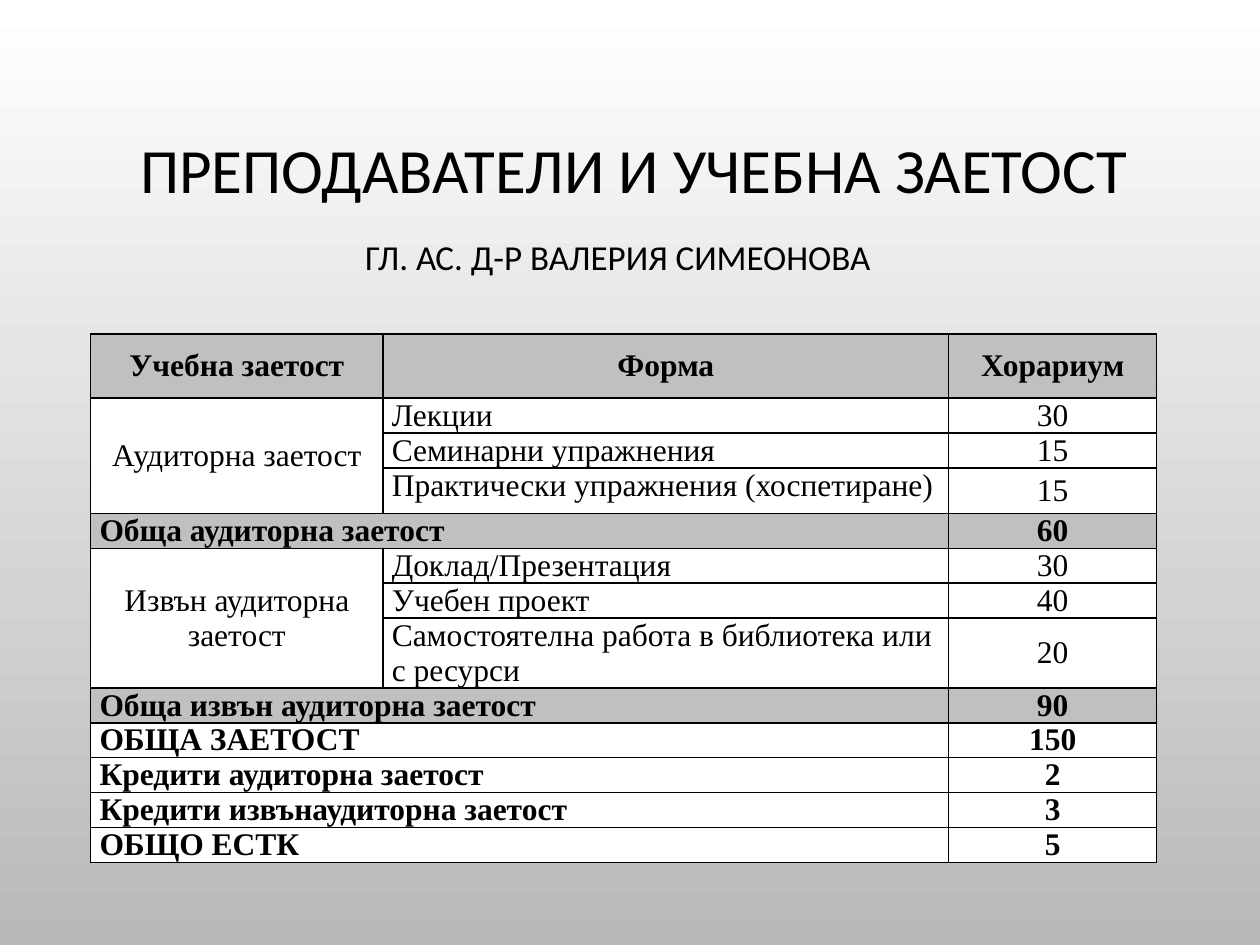
from lxml import etree
from pptx import Presentation
from pptx.dml.color import RGBColor
from pptx.enum.text import MSO_ANCHOR as Anchor, MSO_AUTO_SIZE as AutoSize, PP_ALIGN as Align
from pptx.oxml.ns import qn
from pptx.util import Inches, Pt

BLACK = RGBColor(0x00, 0x00, 0x00)
WHITE = RGBColor(0xFF, 0xFF, 0xFF)
SILVER = RGBColor(0xC0, 0xC0, 0xC0)
BACKDROP_END = RGBColor(0xB9, 0xB9, 0xB9)


def fill_heading(holder, text, size, line_spacing, left, top, width, height):
    holder.left, holder.top = Inches(left), Inches(top)
    holder.width, holder.height = Inches(width), Inches(height)
    frame = holder.text_frame
    frame.text = text
    frame.word_wrap = True
    frame.auto_size = AutoSize.NONE
    paragraph = frame.paragraphs[0]
    paragraph.alignment = Align.CENTER
    paragraph.line_spacing = line_spacing
    paragraph.space_before = Pt(0)
    font = paragraph.runs[0].font
    font.name, font.size, font.color.rgb = "Calibri", Pt(size), BLACK
    return paragraph


def add_borders(cell):
    properties = cell._tc.get_or_add_tcPr()
    for side in ("a:lnL", "a:lnR", "a:lnT", "a:lnB"):
        line = etree.SubElement(properties, qn(side), w=str(Pt(1)))
        solid = etree.SubElement(line, qn("a:solidFill"))
        etree.SubElement(solid, qn("a:srgbClr"), val=str(BLACK))


prs = Presentation()
prs.slide_width, prs.slide_height = Inches(10), Inches(7.5)
slide = prs.slides.add_slide(prs.slide_layouts[1])

# Background fading from top to bottom
backdrop = slide.background.fill
backdrop.gradient()
backdrop.gradient_angle = 270
for stop, color in zip(backdrop.gradient_stops, (WHITE, BACKDROP_END)):
    stop.color.rgb = color

# Title and lecturer
title, lecturer = slide.placeholders
fill_heading(title, "ПРЕПОДАВАТЕЛИ И УЧЕБНА ЗАЕТОСТ", 36, 0.9, 0.71, 0.75, 8.64, 1.24)
title.text_frame.vertical_anchor = Anchor.MIDDLE
lecturer_line = fill_heading(lecturer, "ГЛ. АС. Д-Р ВАЛЕРИЯ СИМЕОНОВА", 20, 1.2, 0.66, 1.75, 8.49, 0.63)
lecturer.text_frame.vertical_anchor = Anchor.TOP
indents = lecturer_line._p.get_or_add_pPr()
indents.set("marL", "0")
indents.set("indent", "0")
etree.SubElement(indents, qn("a:buNone"))

# Workload: activity, form, hours
workload = [
    ("Учебна заетост", "Форма", "Хорариум"),
    ("Аудиторна заетост", "Лекции", "30"),
    ("", "Семинарни упражнения", "15"),
    ("", "Практически упражнения (хоспетиране)", "15"),
    ("Обща аудиторна заетост", "", "60"),
    ("Извън аудиторна заетост", "Доклад/Презентация", "30"),
    ("", "Учебен проект", "40"),
    ("", "Самостоятелна работа в библиотека или с ресурси", "20"),
    ("Обща извън аудиторна заетост", "", "90"),
    ("ОБЩА ЗАЕТОСТ", "", "150"),
    ("Кредити аудиторна заетост", "", "2"),
    ("Кредити извънаудиторна заетост", "", "3"),
    ("ОБЩО ЕСТК", "", "5"),
]
column_widths = (2.32, 4.49, 1.65)
tall_rows = {0: 0.51, 3: 0.36, 7: 0.51}
shaded_rows = (0, 4, 8)
middle_hours = (3, 5, 6, 7)

table = slide.shapes.add_table(
    len(workload), 3, Inches(0.72), Inches(2.65), Inches(8.46), Inches(4)
).table
for column, width in zip(table.columns, column_widths):
    column.width = Inches(width)

for r, entries in enumerate(workload):
    table.rows[r].height = Inches(tall_rows.get(r, 0.25))
    is_total = not entries[1]
    for c, entry in enumerate(entries):
        cell = table.cell(r, c)
        cell.margin_left = cell.margin_right = Inches(0.07)
        cell.margin_top = cell.margin_bottom = 0
        add_borders(cell)
        cell.fill.solid()
        cell.fill.fore_color.rgb = SILVER if r in shaded_rows else WHITE

        is_group = c == 0 and not is_total
        centered = r == 0 or c == 2 or is_group
        middle = r == 0 or is_group or (c == 2 and r in middle_hours)
        cell.vertical_anchor = Anchor.MIDDLE if middle else Anchor.TOP
        cell.text_frame.text = entry
        paragraph = cell.text_frame.paragraphs[0]
        paragraph.alignment = Align.CENTER if centered else Align.LEFT
        font = paragraph.font
        if paragraph.runs:
            font = paragraph.runs[0].font
        font.name, font.size, font.color.rgb = "Times New Roman", Pt(18), BLACK
        font.bold = r == 0 or is_total

# Groups span three rows, totals span two columns
for first in (1, 5):
    table.cell(first, 0).merge(table.cell(first + 2, 0))
for r, entries in enumerate(workload):
    if not entries[1]:
        table.cell(r, 0).merge(table.cell(r, 1))

prs.save("out.pptx")
